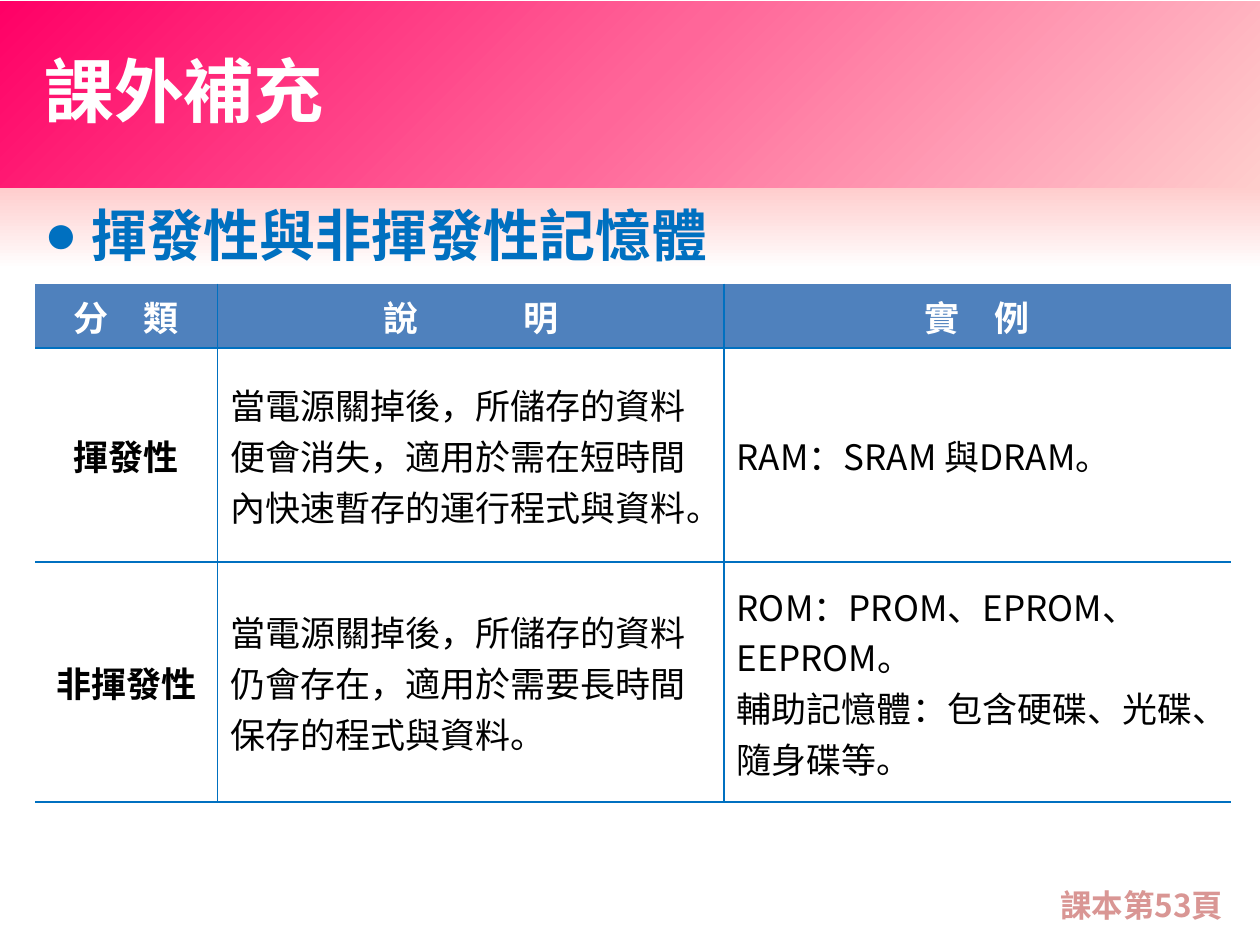
import pptx
import pptx.util
import pptx.oxml
import pptx.oxml.ns
import pptx.dml.color
import pptx.enum.shapes
import pptx.enum.text
from lxml import etree

Pt = pptx.util.Pt
qn = pptx.oxml.ns.qn
ALIGN = pptx.enum.text.PP_ALIGN
ANCHOR = pptx.enum.text.MSO_ANCHOR

FONT = "Noto Sans CJK SC"
COLORS = {
    "white": "FFFFFF",
    "black": "000000",
    "blue": "0070C0",
    "header": "4F81BD",
    "deep_pink": "FF0066",
    "mid_pink": "FF6699",
    "pale_pink": "FFCCCC",
    "page_ref": "D99694",
}


def rgb(name):
    return pptx.dml.color.RGBColor.from_string(COLORS[name])


class SlideBuilder:
    def __init__(self, s, font):
        self.s = s
        self.font = font

    def run(self, p, text, size, color, bold=False):
        r = p.add_run()
        r.text = text
        r.font.name = self.font
        r.font.size = Pt(size)
        r.font.bold = bold
        r.font.color.rgb = rgb(color)
        etree.SubElement(r._r.get_or_add_rPr(), qn("a:ea"), typeface=self.font)

    def place(self, sp, left, top, width, height):
        sp.left, sp.top = Pt(left), Pt(top)
        sp.width, sp.height = Pt(width), Pt(height)

    def gradient_band(self, top, height, stops, angle):
        sp = self.s.shapes.add_shape(
            pptx.enum.shapes.MSO_SHAPE.RECTANGLE, 0, Pt(top), Pt(720), Pt(height))
        sp.shadow.inherit = False
        sp.line.fill.background()
        sp.fill.gradient()
        grad = sp._element.spPr.find(qn("a:gradFill"))
        stop_list = grad.find(qn("a:gsLst"))
        for old in list(stop_list):
            stop_list.remove(old)
        for percent, color in stops:
            gs = etree.SubElement(stop_list, qn("a:gs"), pos=str(percent * 1000))
            etree.SubElement(gs, qn("a:srgbClr"), val=COLORS[color])
        lin = grad.find(qn("a:lin"))
        lin.set("ang", str(angle * 60000))
        lin.set("scaled", "1")
        # Bands lie behind the placeholders
        self.s.shapes.title._element.addprevious(sp._element)

    def title(self, text, box):
        sp = self.s.shapes.title
        self.place(sp, *box)
        tf = sp.text_frame
        tf.vertical_anchor = ANCHOR.MIDDLE
        p = tf.paragraphs[0]
        p.alignment = ALIGN.LEFT
        self.run(p, text, 40, "white", True)

    def bullet(self, text, box):
        sp = self.s.placeholders[1]
        self.place(sp, *box)
        p = sp.text_frame.paragraphs[0]
        pPr = p._p.get_or_add_pPr()
        pPr.set("marL", str(Pt(27)))
        pPr.set("indent", str(-Pt(27)))
        etree.SubElement(pPr, qn("a:buChar"), char="●")
        p.space_before = Pt(0)
        self.run(p, text, 32, "blue", True)

    def label(self, text, box):
        sp = self.s.shapes.add_textbox(*(Pt(v) for v in box))
        tf = sp.text_frame
        tf.word_wrap = True
        p = tf.paragraphs[0]
        p.alignment = ALIGN.CENTER
        self.run(p, text, 18, "page_ref", True)

    def borders(self, cell, sides):
        tcPr = cell._tc.get_or_add_tcPr()
        for i, side in enumerate("LRTB"):
            ln = etree.Element(qn("a:ln" + side), w=str(Pt(1)))
            if side in sides:
                fill = etree.SubElement(ln, qn("a:solidFill"))
                etree.SubElement(fill, qn("a:srgbClr"), val=COLORS["blue"])
            else:
                etree.SubElement(ln, qn("a:noFill"))
            tcPr.insert(i, ln)

    def table(self, rows, left, top, widths, heights):
        frame = self.s.shapes.add_table(
            len(rows), len(widths), Pt(left), Pt(top), Pt(sum(widths)), Pt(sum(heights)))
        table = frame.table
        for column, width in zip(table.columns, widths):
            column.width = Pt(width)
        for row, height in zip(table.rows, heights):
            row.height = Pt(height)
        for i, row in enumerate(rows):
            for j, text in enumerate(row):
                header, heading = i == 0, i == 0 or j == 0
                cell = table.cell(i, j)
                cell.vertical_anchor = ANCHOR.MIDDLE
                if header:
                    cell.fill.solid()
                    cell.fill.fore_color.rgb = rgb("header")
                else:
                    cell.fill.background()
                # Inner lines and a bottom line, open at the outer sides
                sides = "B" + ("" if header else "T")
                sides += "L" if j > 0 else ""
                sides += "R" if j < len(widths) - 1 else ""
                self.borders(cell, sides)
                tf = cell.text_frame
                for k, line in enumerate(text.split("\n")):
                    p = tf.add_paragraph() if k else tf.paragraphs[0]
                    p.alignment = ALIGN.CENTER if heading else ALIGN.LEFT
                    self.run(p, line, 20, "white" if header else "black", heading)


def main():
    prs = pptx.Presentation()
    prs.slide_width, prs.slide_height = Pt(720), Pt(540)
    s = prs.slides.add_slide(prs.slide_layouts[1])
    for ph in list(s.placeholders)[2:]:
        ph._element.getparent().remove(ph._element)
    b = SlideBuilder(s, FONT)

    # Background bands
    b.gradient_band(106.5, 433.5, [(0, "pale_pink"), (11, "white"), (100, "white")], 90)
    b.gradient_band(
        0.75, 106.5, [(0, "deep_pink"), (50, "mid_pink"), (100, "pale_pink")], 45)

    # Title and topic
    b.title("課外補充", (18, 6, 570, 90))
    b.bullet("揮發性與非揮發性記憶體", (18, 111, 684, 384))

    # Textbook page
    b.label("課本第53頁", (592.5, 502.5, 120, 29))

    # Memory comparison
    b.table(
        [
            ("分　類", "說　　　明", "實　例"),
            ("揮發性",
             "當電源關掉後，所儲存的資料便會消失，適用於需在短時間內快速暫存的運行程式與資料。",
             "RAM：SRAM 與DRAM。"),
            ("非揮發性",
             "當電源關掉後，所儲存的資料仍會存在，適用於需要長時間保存的程式與資料。",
             "ROM：PROM、EPROM、EEPROM。\n輔助記憶體：包含硬碟、光碟、隨身碟等。"),
        ],
        20, 162, [104.4, 289.4, 289.4], [36.8, 122.4, 137])

    prs.save("out.pptx")


if __name__ == "__main__":
    main()
